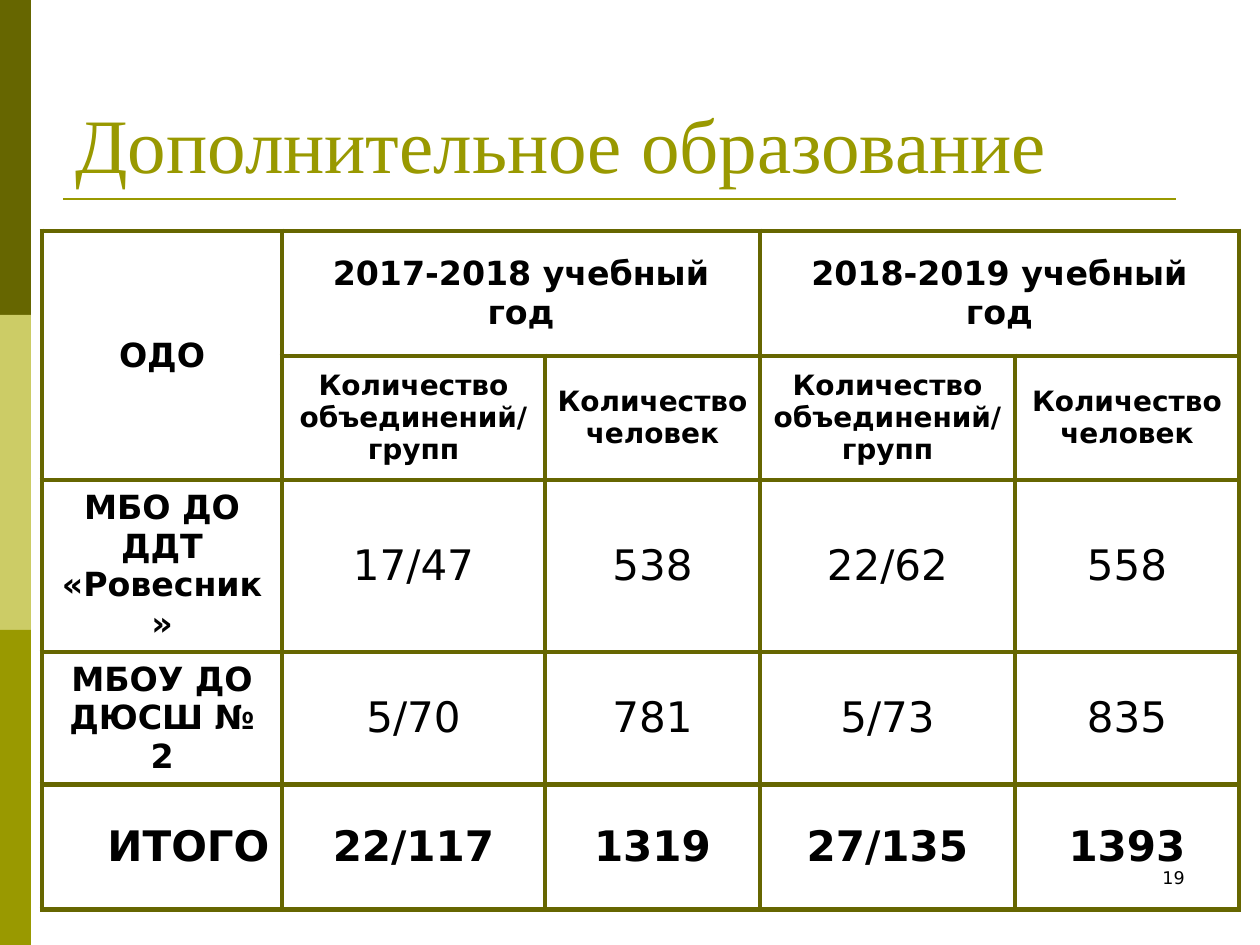
from lxml.etree import SubElement
from pptx import Presentation
from pptx.dml.color import RGBColor
from pptx.enum.shapes import MSO_CONNECTOR, MSO_SHAPE
from pptx.enum.text import MSO_ANCHOR, PP_ALIGN
from pptx.oxml.ns import qn
from pptx.util import Emu, Pt

THEME = {
    "dark": "666600", "pale": "CCCC66", "olive": "999900", "ink": "000000",
    "serif": "Times New Roman", "sans": "DejaVu Sans",
    "title": 44, "head": 19, "sub": 16, "body": 24, "page": 10,
    "rule": 1.5, "grid": 3,
}
SCALE = 914400 / 126


def px(n):
    return Emu(round(n * SCALE))


def put(frame, text, size, font, color, align, anchor, bold=False):
    frame.word_wrap = True
    frame.vertical_anchor = anchor
    frame.text = text
    para = frame.paragraphs[0]
    para.alignment = align
    face = para.runs[0].font
    face.size = Pt(THEME[size])
    face.name = THEME[font]
    face.bold = bold
    face.color.rgb = RGBColor.from_string(THEME[color])


prs = Presentation()
prs.slide_width, prs.slide_height = px(1260), px(945)
slide = prs.slides.add_slide(prs.slide_layouts[6])
shapes = slide.shapes

# Side bands
for i, tone in enumerate(("dark", "pale", "olive")):
    band = shapes.add_shape(MSO_SHAPE.RECTANGLE, 0, px(315 * i), px(31), px(315))
    band.shadow.inherit = False
    band.fill.solid()
    band.fill.fore_color.rgb = RGBColor.from_string(THEME[tone])
    band.line.fill.background()

# Title and the rule below it
rule = shapes.add_connector(MSO_CONNECTOR.STRAIGHT, px(63), px(199), px(1176), px(199))
rule.line.color.rgb = RGBColor.from_string(THEME["olive"])
rule.line.width = Pt(THEME["rule"])
SubElement(rule.element.spPr, qn("a:effectLst"))

title = shapes.add_textbox(px(63), px(38), px(1134), px(157))
put(title.text_frame, "Дополнительное образование", "title", "serif", "olive",
    PP_ALIGN.LEFT, MSO_ANCHOR.BOTTOM)

# Table
groups, people = "Количество объединений/групп", "Количество человек"
rows = [
    ["ОДО", "2017-2018 учебный год", "", "2018-2019 учебный год", ""],
    ["", groups, people, groups, people],
    ["МБО ДО ДДТ «Ровесник»", "17/47", "538", "22/62", "558"],
    ["МБОУ ДО ДЮСШ № 2", "5/70", "781", "5/73", "835"],
    ["ИТОГО", "22/117", "1319", "27/135", "1393"],
]
widths = [240, 263, 215, 255, 224]
heights = [125, 124, 168, 129, 125]
table = shapes.add_table(len(rows), len(widths), px(42), px(231),
                         px(sum(widths)), px(sum(heights))).table
table.first_row = table.horz_banding = False
for col, width in zip(table.columns, widths):
    col.width = px(width)
for row, height in zip(table.rows, heights):
    row.height = px(height)

last = len(rows) - 1
for r, row in enumerate(rows):
    for c, text in enumerate(row):
        cell = table.cell(r, c)
        props = cell._tc.get_or_add_tcPr()
        for side in ("lnL", "lnR", "lnT", "lnB"):
            edge = SubElement(props, qn("a:" + side), w=str(Pt(THEME["grid"])))
            fill = SubElement(edge, qn("a:solidFill"))
            SubElement(fill, qn("a:srgbClr"), val=THEME["dark"])
        cell.fill.background()
        if not text:
            continue
        if r == 1:
            size = "sub"
        elif r == 0 or c == 0 and r < last:
            size = "head"
        else:
            size = "body"
        align = PP_ALIGN.RIGHT if text == "ИТОГО" else PP_ALIGN.CENTER
        bold = r in (0, 1, last) or c == 0
        cell.vertical_anchor = MSO_ANCHOR.MIDDLE
        put(cell.text_frame, text, size, "sans", "ink", align, MSO_ANCHOR.MIDDLE, bold)

# Merged heads
table.cell(0, 0).merge(table.cell(1, 0))
for c in (1, 3):
    table.cell(0, c).merge(table.cell(0, c + 1))

# Page number
page = shapes.add_textbox(px(903), px(861), px(294), px(63))
put(page.text_frame, "19", "page", "sans", "ink", PP_ALIGN.RIGHT, MSO_ANCHOR.TOP)

prs.save("out.pptx")
